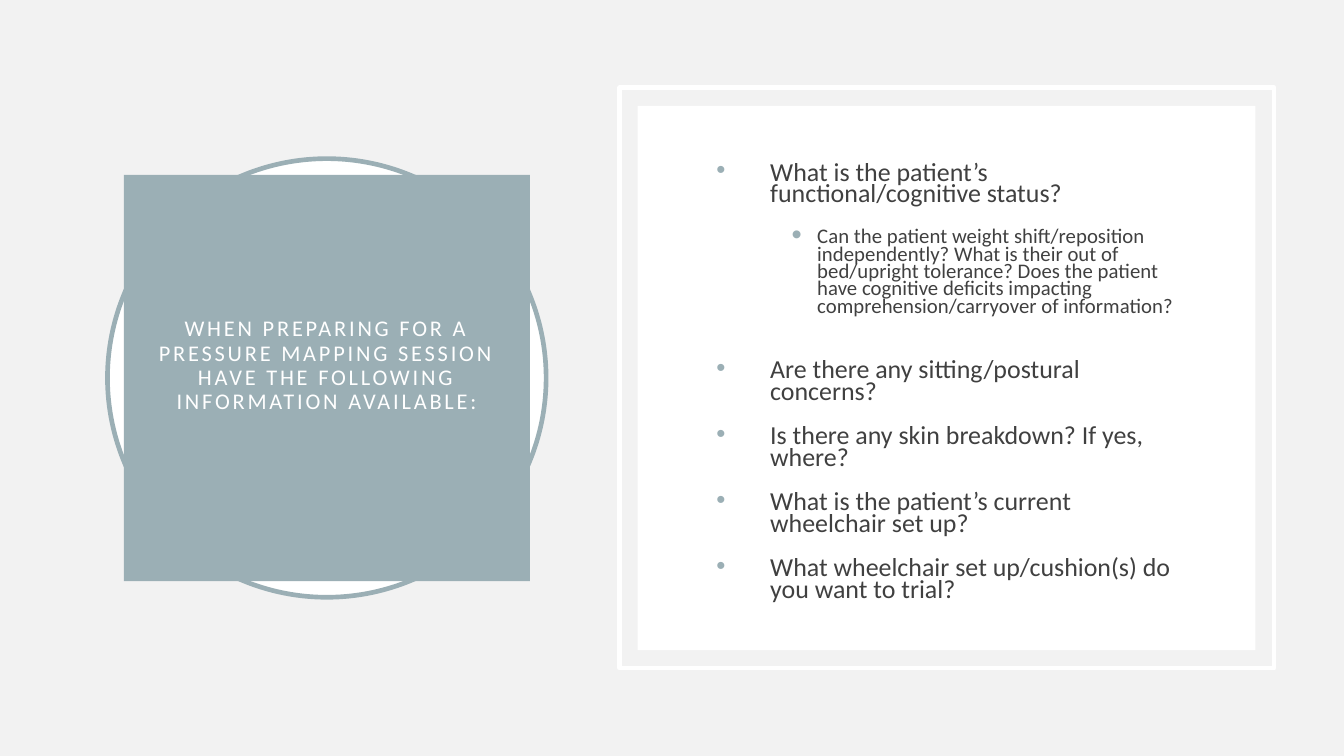
from dataclasses import dataclass

from lxml import etree
from pptx import Presentation
from pptx.dml.color import RGBColor
from pptx.enum import shapes, text
from pptx.oxml import ns
from pptx.util import Pt


@dataclass(frozen=True)
class Theme:
    back: RGBColor = RGBColor(0xF2, 0xF2, 0xF2)
    white: RGBColor = RGBColor(0xFF, 0xFF, 0xFF)
    accent: RGBColor = RGBColor(0x9B, 0xAF, 0xB5)
    ink: RGBColor = RGBColor(0x40, 0x40, 0x40)
    face: str = "Calibri"
    head: float = 12
    main: float = 13.9
    sub: float = 11.1
    rule: float = 2.5


THEME = Theme()
TITLE = "WHEN PREPARING FOR A PRESSURE MAPPING SESSION HAVE THE FOLLOWING INFORMATION AVAILABLE:"
# Each item: wording, whether it is a detail, space before
ITEMS = [
    ("What is the patient’s functional/cognitive status?", False, 12),
    ("Can the patient weight shift/reposition independently? What is their "
     "out of bed/upright tolerance? Does the patient have cognitive deficits "
     "impacting comprehension/carryover of information?", True, 12),
    ("Are there any sitting/postural concerns?", False, 23.9),
    ("Is there any skin breakdown? If yes, where?", False, 11.9),
    ("What is the patient’s current wheelchair set up?", False, 11.9),
    ("What wheelchair set up/cushion(s) do you want to trial?", False, 11.9),
]


def add_panel(slide, kind, box, fill=None, line=None):
    panel = slide.shapes.add_shape(kind, *map(Pt, box))
    panel.shadow.inherit = False
    if fill is None:
        panel.fill.background()
    else:
        panel.fill.solid()
        panel.fill.fore_color.rgb = fill
    if line is None:
        panel.line.fill.background()
    else:
        panel.line.color.rgb = line
        panel.line.width = Pt(THEME.rule)


def place(slide, holder, box, inset, foot):
    """Move a placeholder to the front and set its text frame."""
    slide.shapes._spTree.append(holder._element)
    holder.left, holder.top, holder.width, holder.height = map(Pt, box)
    frame = holder.text_frame
    frame.word_wrap = True
    frame.auto_size = text.MSO_AUTO_SIZE.NONE
    frame.vertical_anchor = text.MSO_ANCHOR.MIDDLE
    frame.margin_left = frame.margin_top = frame.margin_right = Pt(inset)
    frame.margin_bottom = Pt(foot)
    return frame


def set_font(para, size, color):
    para.font.name = THEME.face
    para.font.size = Pt(size)
    para.font.color.rgb = color


def set_bullet(para, left, hang, scale):
    props = para._p.get_or_add_pPr()
    props.set("marL", str(Pt(left)))
    props.set("indent", str(-Pt(hang)))
    color = etree.SubElement(props, ns.qn("a:buClr"))
    etree.SubElement(color, ns.qn("a:srgbClr"), val=str(THEME.accent))
    etree.SubElement(props, ns.qn("a:buSzPct"), val=str(scale * 1000))
    etree.SubElement(props, ns.qn("a:buFont"), typeface="Arial")
    etree.SubElement(props, ns.qn("a:buChar"), char="•")


def add_title(slide):
    title = slide.shapes.title
    title.fill.solid()
    title.fill.fore_color.rgb = THEME.accent
    # The deeper foot lifts the heading by half a line
    frame = place(slide, title, (66.3, 93.7, 217.6, 217.6), 14.4, 27.4)
    para = frame.paragraphs[0]
    para.text = TITLE
    para.alignment = text.PP_ALIGN.CENTER
    para.line_spacing = 0.9
    set_font(para, THEME.head, THEME.white)
    para.runs[0].font._element.set("spc", "150")


def add_list(slide):
    frame = place(slide, slide.placeholders[1], (369.4, 74.2, 275, 262), 7.2, 7.2)
    for i, (words, detail, gap) in enumerate(ITEMS):
        para = frame.add_paragraph() if i else frame.paragraphs[0]
        para.text = words
        para.level = 3 if detail else 0
        para.alignment = text.PP_ALIGN.LEFT
        para.line_spacing = 0.7
        para.space_before = Pt(gap)
        para.space_after = Pt(0)
        if detail:
            set_bullet(para, 61.2, 13.7, 140)
        else:
            set_bullet(para, 36, 28.8, 100)
        set_font(para, THEME.sub if detail else THEME.main, THEME.ink)


def main():
    deck = Presentation()
    deck.slide_width, deck.slide_height = Pt(720), Pt(405)
    slide = deck.slides.add_slide(deck.slide_layouts[1])
    slide.background.fill.solid()
    slide.background.fill.fore_color.rgb = THEME.back

    # Heading on a ring
    kind = shapes.MSO_SHAPE
    add_panel(slide, kind.OVAL, (57.6, 85, 235, 235), THEME.white, THEME.accent)
    add_title(slide)

    # Questions on a framed panel
    add_panel(slide, kind.RECTANGLE, (332, 47, 350.6, 311), line=THEME.white)
    add_panel(slide, kind.RECTANGLE, (341.6, 56.7, 331, 291.6), THEME.white)
    add_list(slide)

    deck.save("out.pptx")


if __name__ == "__main__":
    main()
